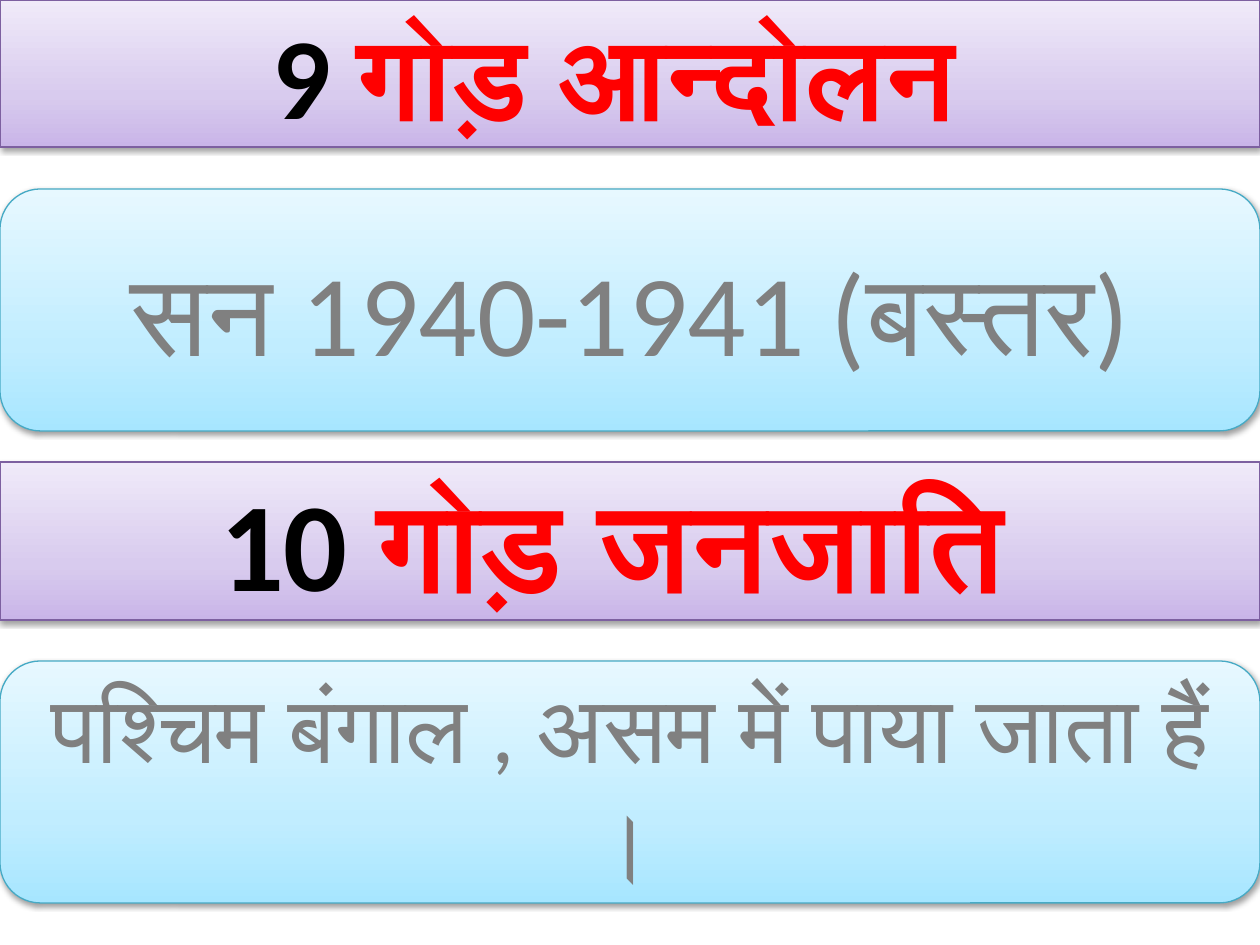
from lxml.etree import SubElement
from pptx import Presentation
from pptx.dml.color import RGBColor
from pptx.enum.shapes import MSO_SHAPE
from pptx.enum.text import MSO_ANCHOR, PP_ALIGN
from pptx.oxml.ns import qn
from pptx.util import Inches, Pt

SCALE = Inches(1) / 126
WIDTH, HEIGHT = 1260, 945

COLORS = {
    "heading_fill": ["C9B5E8", "D8CBEE", "F0EAF9"],
    "heading_line": "7D60A0",
    "detail_fill": ["A7E6FF", "C1EDFF", "E7F8FF"],
    "detail_line": "46AAC5",
    "number": "000000",
    "title": "FF0000",
    "detail": "808080",
    "shadow": "000000",
}
STOPS = [0, 35, 100]


def px(length):
    return round(length * SCALE)


def add_color(parent, value):
    return SubElement(parent, qn("a:srgbClr"), val=value)


def paint_gradient(shape, colors):
    shape.fill.gradient()
    shape.fill.gradient_angle = 90
    stop_list = shape._element.spPr.find(".//" + qn("a:gsLst"))
    for stop in list(stop_list):
        stop_list.remove(stop)
    for position, color in zip(STOPS, colors):
        add_color(SubElement(stop_list, qn("a:gs"), pos=str(position * 1000)), color)


def cast_shadow(shape):
    shape.shadow.inherit = False
    effects = shape._element.spPr.find(qn("a:effectLst"))
    shadow = SubElement(effects, qn("a:outerShdw"), blurRad="40000", dist="20000",
                        dir="5400000", rotWithShape="0")
    color = add_color(shadow, COLORS["shadow"])
    SubElement(color, qn("a:alpha"), val="38000")


def add_panel(slide, box, preset, style, spans, size, bold):
    shape = slide.shapes.add_shape(preset, *map(px, box))
    paint_gradient(shape, COLORS[style + "_fill"])
    shape.line.color.rgb = RGBColor.from_string(COLORS[style + "_line"])
    shape.line.width = Pt(0.75)
    cast_shadow(shape)
    frame = shape.text_frame
    for name, value in {"word_wrap": True, "vertical_anchor": MSO_ANCHOR.MIDDLE}.items():
        setattr(frame, name, value)
    para = frame.paragraphs[0]
    para.alignment = PP_ALIGN.CENTER
    for text, color in spans:
        span = para.add_run()
        span.text = text
        for name, value in {"name": "Calibri", "size": Pt(size), "bold": bold}.items():
            setattr(span.font, name, value)
        span.font.color.rgb = RGBColor.from_string(COLORS[color])


def add_heading(slide, box, number, title, size):
    spans = [(number + " ", "number"), (title + " ", "title")]
    add_panel(slide, box, MSO_SHAPE.RECTANGLE, "heading", spans, size, True)


def add_detail(slide, box, text, size):
    add_panel(slide, box, MSO_SHAPE.ROUNDED_RECTANGLE, "detail",
              [(text, "detail")], size, False)


def main():
    deck = Presentation()
    deck.slide_width, deck.slide_height = px(WIDTH), px(HEIGHT)
    slide = deck.slides.add_slide(deck.slide_layouts[6])
    add_heading(slide, (0, 0, WIDTH, 147), "9", "गोड़ आन्दोलन", 66)
    add_detail(slide, (0, 189, WIDTH, 242), "सन 1940-1941 (बस्तर)", 66)
    add_heading(slide, (0, 462, WIDTH, 158), "10", "गोड़ जनजाति", 72)
    add_detail(slide, (0, 661, WIDTH, 242), "पश्चिम बंगाल , असम में पाया जाता हैं । ", 54)
    deck.save("out.pptx")


if __name__ == "__main__":
    main()
